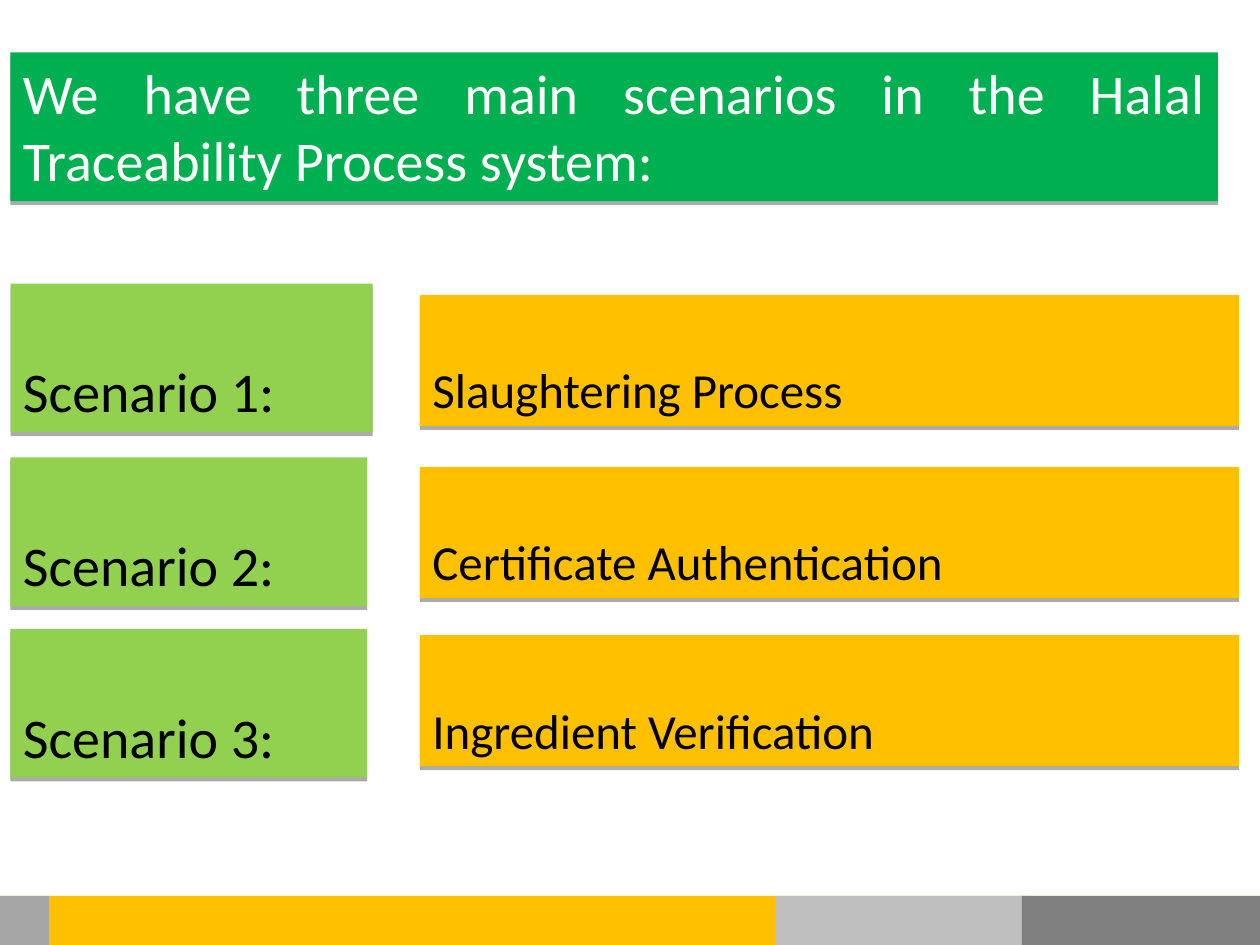
from lxml import etree
from pptx import Presentation
from pptx.dml.color import RGBColor
from pptx.enum.shapes import MSO_SHAPE as Shape
from pptx.enum.text import MSO_ANCHOR as Anchor, MSO_AUTO_SIZE as AutoSize, PP_ALIGN as Align
from pptx.oxml.ns import qn
from pptx.util import Pt

SCENARIOS = [
    ("Scenario 1:", "Slaughtering Process", 162, 168.5, 207),
    ("Scenario 2:", "Certificate Authentication", 261.3, 266.8, 203.8),
    ("Scenario 3:", "Ingredient Verification", 359.3, 362.9, 203.8),
]
FOOTER = [(0, 720, "FFC000"), (443.5, 142, "BFBFBF"), (584, 136, "808080"), (0, 28.1, "A6A6A6")]


def rgb(code):
    """Turn a hex string into a colour."""
    return RGBColor.from_string(code)


def add_shadow(sp):
    """Give a shape a hard shadow just below it."""
    effects = etree.SubElement(sp._element.spPr, qn("a:effectLst"))
    shadow = etree.SubElement(effects, qn("a:outerShdw"), blurRad="0", dist=str(Pt(2.2)),
                              dir="5400000", rotWithShape="0")
    color = etree.SubElement(shadow, qn("a:srgbClr"), val="000000")
    etree.SubElement(color, qn("a:alpha"), val="32000")


def add_bar(s, left, top, width, height, fill):
    """Add a plain filled rectangle without an outline."""
    sp = s.shapes.add_shape(Shape.RECTANGLE, Pt(left), Pt(top), Pt(width), Pt(height))
    sp.fill.solid()
    sp.fill.fore_color.rgb = rgb(fill)
    sp.line.fill.background()
    sp.shadow.inherit = False
    return sp


def add_label(s, text, box, fill, size, color="000000", align=Align.LEFT, spacing=1, hanging=0):
    """Add a shadowed rectangle with one paragraph of text."""
    sp = add_bar(s, *box, fill)
    sp._element.spPr.remove(sp._element.spPr.find(qn("a:effectLst")))
    add_shadow(sp)
    tf = sp.text_frame
    tf.text = text
    tf.word_wrap = True
    tf.auto_size = AutoSize.SHAPE_TO_FIT_TEXT
    tf.vertical_anchor = Anchor.TOP
    p = tf.paragraphs[0]
    p.alignment = align
    p.line_spacing = spacing
    if hanging:
        pPr = p._p.get_or_add_pPr()
        pPr.set("marL", str(Pt(hanging)))
        pPr.set("indent", str(-Pt(hanging)))
    r = p.runs[0]
    r.font.name = "Calibri"
    r.font.size = Pt(size)
    r.font.color.rgb = rgb(color)


def main():
    """Build the scenario slide."""
    prs = Presentation()
    prs.slide_width, prs.slide_height = Pt(720), Pt(540)
    s = prs.slides.add_slide(prs.slide_layouts[6])
    add_label(s, "We have three main scenarios in the Halal Traceability Process system:",
              (6, 30, 690, 85), "00B050", 32, "FFFFFF", Align.JUSTIFY)
    for name, process, name_top, process_top, name_width in SCENARIOS:
        add_label(s, name, (6, name_top, name_width, 85), "92D050", 32, spacing=2.0)
        add_label(s, process, (240, process_top, 468, 75), "FFC000", 28,
                  align=Align.JUSTIFY, spacing=2.0, hanging=40.5)
    for left, width, fill in FOOTER:
        add_bar(s, left, 511.9, width, 28.1, fill)
    prs.save("out.pptx")


if __name__ == "__main__":
    main()
